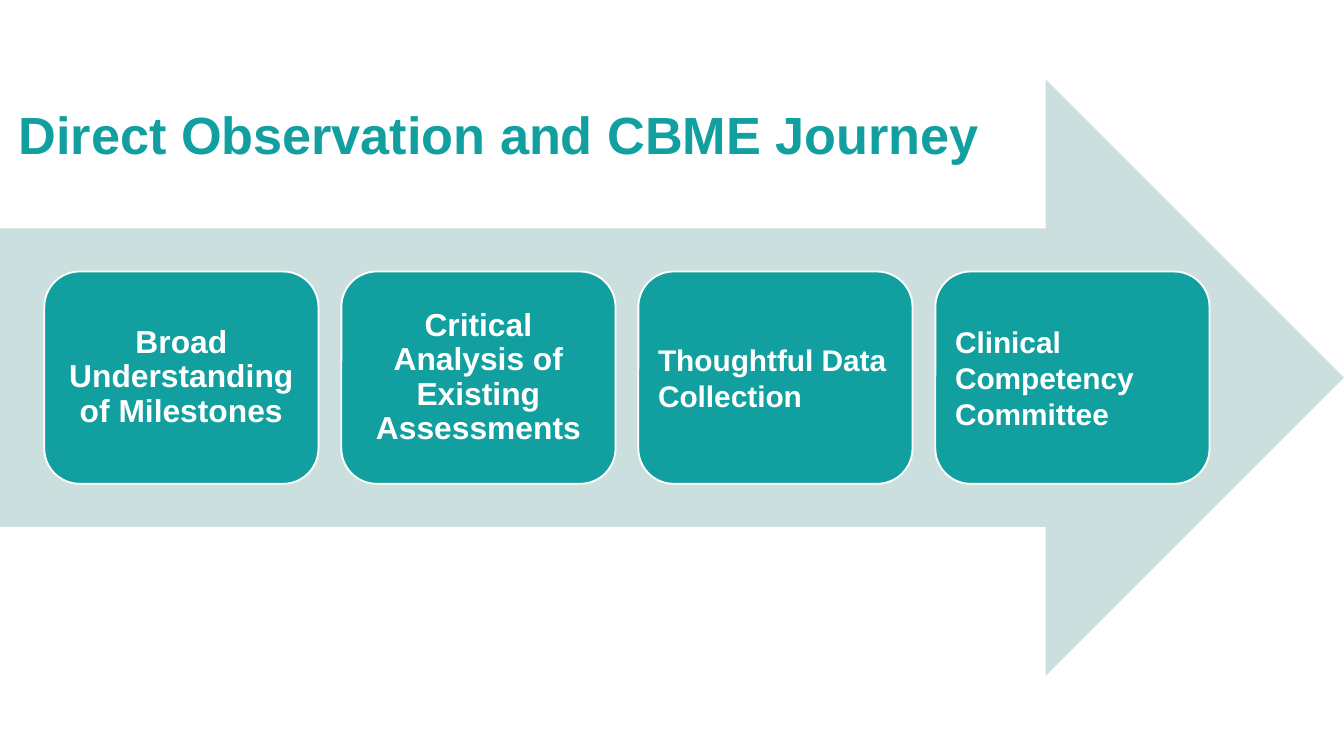
from pptx import Presentation
from pptx.dml.color import RGBColor
from pptx.enum.shapes import MSO_SHAPE as Preset
from pptx.enum.text import MSO_ANCHOR as Anchor, PP_ALIGN as Align
from pptx.util import Inches, Pt

TEAL = RGBColor(0x12, 0x9F, 0x9F)
PALE_TEAL = RGBColor(0xCC, 0xDF, 0xDF)
WHITE = RGBColor(0xFF, 0xFF, 0xFF)

STEP_LEFT, STEP_TOP, STEP_PITCH = 0.33, 2.02, 2.21
STEP_WIDTH, STEP_HEIGHT = 2.04, 1.58
STEP_INSET = 0.07

CENTERED = {"size": 17, "align": Align.CENTER, "line_spacing": 0.9}
LEFT_ALIGNED = {"size": 16, "align": Align.LEFT}
STEPS = [
    ("Broad Understanding of Milestones", CENTERED),
    ("Critical Analysis of Existing Assessments", CENTERED),
    ("Thoughtful Data Collection", LEFT_ALIGNED),
    ("Clinical Competency Committee", LEFT_ALIGNED),
]


def write_text(shape, text, *, size, color, align=Align.LEFT,
               line_spacing=1.0, anchor=Anchor.TOP, inset=None):
    frame = shape.text_frame
    frame.word_wrap = True
    frame.vertical_anchor = anchor
    if inset is not None:
        frame.margin_left = frame.margin_right = Inches(inset)
        frame.margin_top = frame.margin_bottom = Inches(inset)
    paragraph = frame.paragraphs[0]
    paragraph.alignment = align
    paragraph.line_spacing = line_spacing
    run = paragraph.add_run()
    run.text = text
    run.font.name = "Arial"
    run.font.size = Pt(size)
    run.font.bold = True
    run.font.color.rgb = color


def add_filled_shape(slide, preset, left, top, width, height, fill, line=None):
    shape = slide.shapes.add_shape(
        preset, Inches(left), Inches(top), Inches(width), Inches(height))
    shape.shadow.inherit = False
    shape.fill.solid()
    shape.fill.fore_color.rgb = fill
    if line is None:
        shape.line.fill.background()
    else:
        shape.line.color.rgb = line
        shape.line.width = Pt(1)
    return shape


def add_step(slide, index, text, text_format):
    step = add_filled_shape(
        slide, Preset.ROUNDED_RECTANGLE, STEP_LEFT + index * STEP_PITCH,
        STEP_TOP, STEP_WIDTH, STEP_HEIGHT, TEAL, line=WHITE)
    write_text(step, text, color=WHITE, anchor=Anchor.MIDDLE,
               inset=STEP_INSET, **text_format)


def add_title(slide, text):
    title = slide.shapes.add_textbox(
        Inches(0.04), Inches(0.71), Inches(8.27), Inches(0.88))
    write_text(title, text, size=28, color=TEAL)


def main():
    presentation = Presentation()
    presentation.slide_width = Inches(10)
    presentation.slide_height = Inches(10 * 9 / 16)
    slide = presentation.slides.add_slide(presentation.slide_layouts[6])
    add_filled_shape(slide, Preset.RIGHT_ARROW, 0, 0.59, 10, 4.44, PALE_TEAL)
    for index, (text, text_format) in enumerate(STEPS):
        add_step(slide, index, text, text_format)
    add_title(slide, "Direct Observation and CBME Journey")
    presentation.save("out.pptx")


if __name__ == "__main__":
    main()
